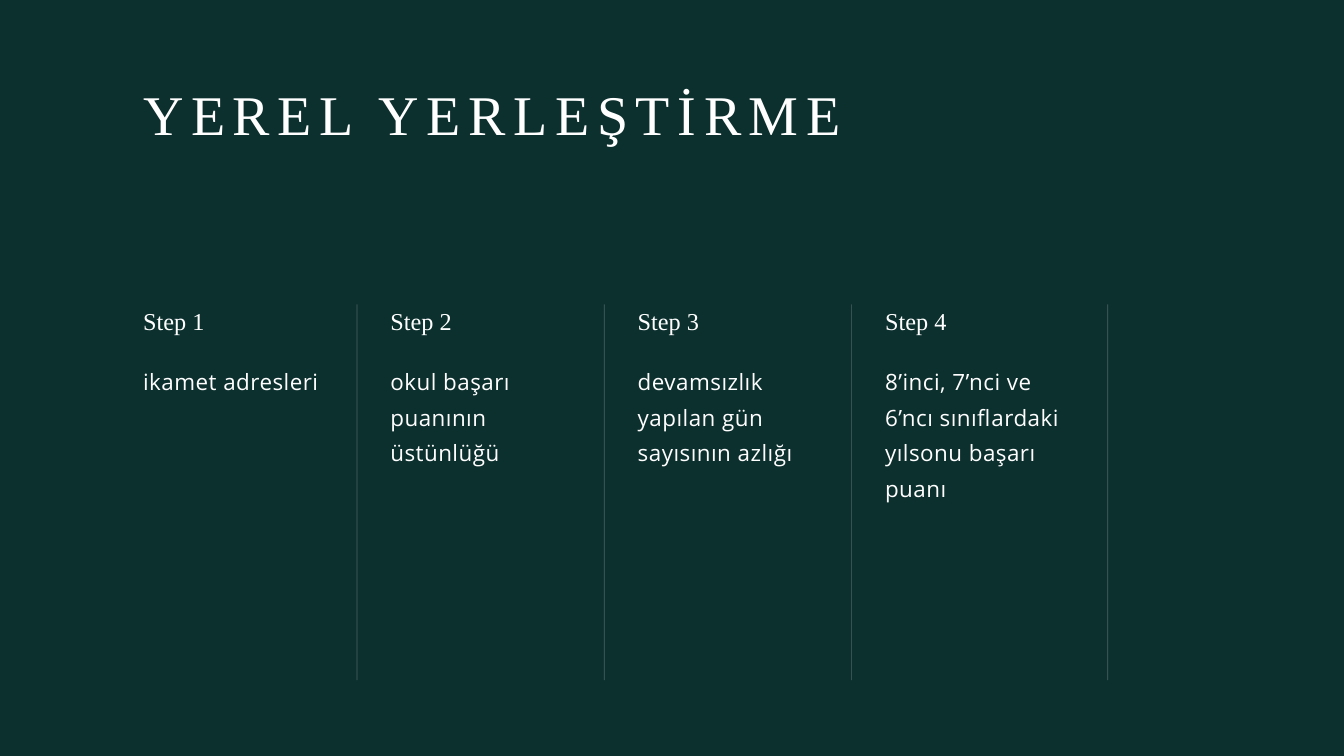
from dataclasses import dataclass

from lxml import etree
from pptx import Presentation
from pptx.dml.color import RGBColor
from pptx.enum.shapes import MSO_CONNECTOR
from pptx.enum.text import MSO_ANCHOR, MSO_AUTO_SIZE, PP_ALIGN
from pptx.oxml.ns import qn
from pptx.util import Pt

STRAIGHT = MSO_CONNECTOR.STRAIGHT
TOP = MSO_ANCHOR.TOP
GROW = MSO_AUTO_SIZE.SHAPE_TO_FIT_TEXT
LEFT = PP_ALIGN.LEFT
TITLE_ONLY = 5


@dataclass(frozen=True)
class Theme:
    background: RGBColor = RGBColor(0x0C, 0x30, 0x2E)
    ink: RGBColor = RGBColor(0xFF, 0xFF, 0xFF)
    serif: str = "Times New Roman"
    sans: str = "Open Sans"
    title_size: float = 60
    heading_size: float = 26
    body_size: float = 24
    rule_width: float = 0.75
    rule_opacity: int = 25


@dataclass(frozen=True)
class Step:
    text: str
    lines: int
    width: float = 193.7


THEME = Theme()
STEPS = (
    Step("ikamet adresleri", 1),
    Step("okul başarı puanının üstünlüğü", 3),
    Step("devamsızlık yapılan gün sayısının azlığı", 3),
    Step("8’inci, 7’nci ve 6’ncı sınıflardaki yılsonu başarı puanı", 4, 203),
)

# Layout, in points
PAGE_WIDTH, PAGE_HEIGHT = 1440, 810
MARGIN = 153.3
COLUMN_PITCH = 265
RULE_GAP = 35.5
HEADING_TOP, HEADING_HEIGHT = 323.3, 33.8
BODY_TOP, BODY_LEADING = 384.5, 38.4
RULE_TOP, RULE_BOTTOM = 326.2, 728.6


def write_text(box, text: str, *, font: str, size: float, leading: float,
               tracking: float = 0) -> None:
    """Fill a box with one left-aligned paragraph; tracking is in points."""
    frame = box.text_frame
    frame.word_wrap = True
    frame.auto_size = GROW
    frame.vertical_anchor = TOP
    frame.margin_left = frame.margin_right = 0
    frame.margin_top = frame.margin_bottom = 0
    para = frame.paragraphs[0]
    para.alignment = LEFT
    para.line_spacing = Pt(leading)
    para.space_before = Pt(0)
    span = para.add_run()
    span.text = text
    span.font.name = font
    span.font.size = Pt(size)
    span.font.color.rgb = THEME.ink
    if tracking:
        span.font._element.set("spc", str(round(tracking * 100)))


def add_title(page, text: str) -> None:
    box = page.shapes.title
    box.left, box.top = Pt(MARGIN), Pt(67.7)
    box.width, box.height = Pt(1155.6), Pt(85.7)
    write_text(box, text, font=THEME.serif, size=THEME.title_size,
               leading=90, tracking=8.2)


def add_step(page, number: int, step: Step, left: float) -> None:
    group = page.shapes.add_group_shape()
    heading = group.shapes.add_textbox(
        Pt(left), Pt(HEADING_TOP), Pt(step.width), Pt(HEADING_HEIGHT))
    write_text(heading, f"Step {number}", font=THEME.serif,
               size=THEME.heading_size, leading=36.4)
    body = group.shapes.add_textbox(
        Pt(left), Pt(BODY_TOP), Pt(step.width), Pt(step.lines * BODY_LEADING))
    write_text(body, step.text, font=THEME.sans, size=THEME.body_size,
               leading=BODY_LEADING, tracking=0.5)


def add_rule(page, x: float) -> None:
    rule = page.shapes.add_connector(
        STRAIGHT, Pt(x), Pt(RULE_BOTTOM), Pt(x), Pt(RULE_TOP))
    rule.line.width = Pt(THEME.rule_width)
    rule.line.color.rgb = THEME.ink
    properties = rule._element.spPr
    # Transparent line without a shadow
    color = properties.find(".//" + qn("a:srgbClr"))
    etree.SubElement(color, qn("a:alpha"), val=str(THEME.rule_opacity * 1000))
    etree.SubElement(properties, qn("a:effectLst"))


def main() -> None:
    deck = Presentation()
    deck.slide_width, deck.slide_height = Pt(PAGE_WIDTH), Pt(PAGE_HEIGHT)
    page = deck.slides.add_slide(deck.slide_layouts[TITLE_ONLY])
    page.background.fill.solid()
    page.background.fill.fore_color.rgb = THEME.background

    add_title(page, "YEREL YERLEŞTİRME")

    # Step columns, each closed by a rule on its right
    for index, step in enumerate(STEPS):
        left = MARGIN + index * COLUMN_PITCH
        add_step(page, index + 1, step, left)
        add_rule(page, left + step.width + RULE_GAP)

    deck.save("out.pptx")


if __name__ == "__main__":
    main()
